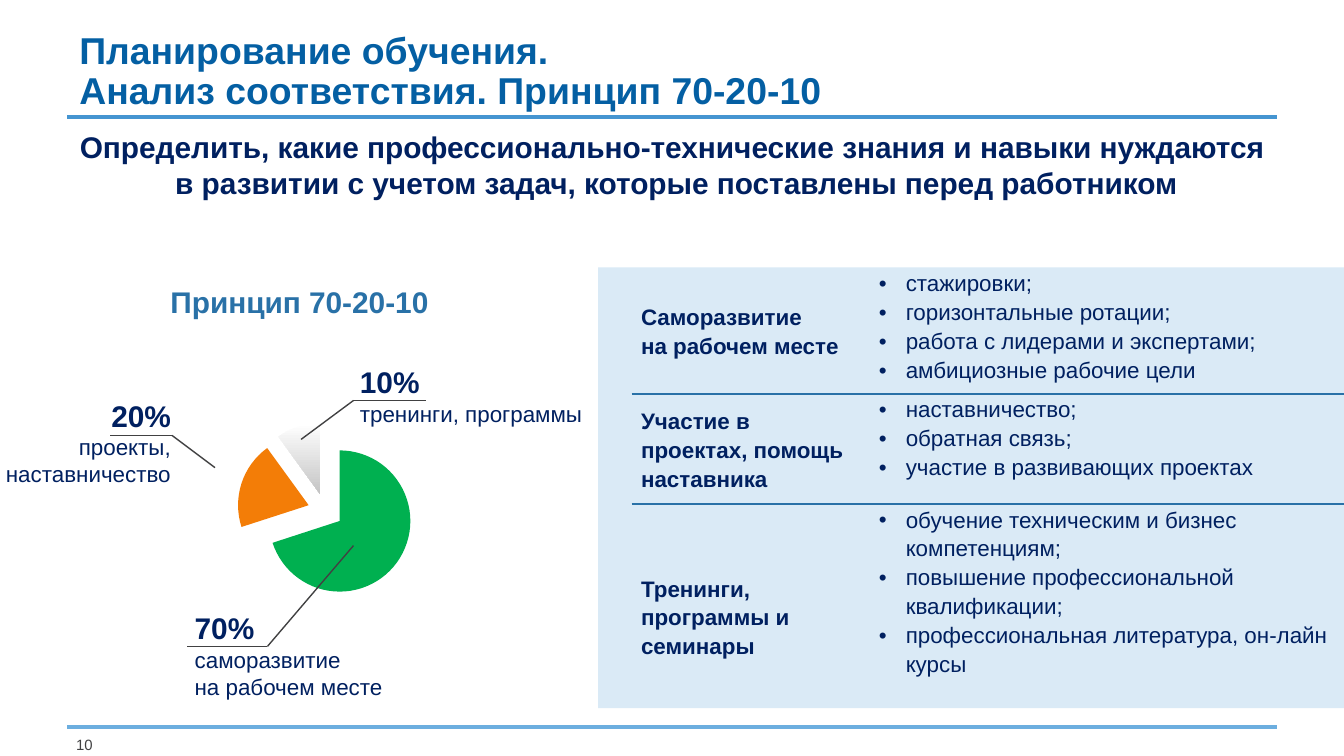
from copy import deepcopy

from lxml.etree import SubElement
from pptx import Presentation
from pptx.chart.data import CategoryChartData as Data
from pptx.dml.color import RGBColor
from pptx.enum.chart import XL_CHART_TYPE as Chart
from pptx.enum.shapes import MSO_CONNECTOR as Link, MSO_SHAPE as Shape
from pptx.enum.text import MSO_ANCHOR as Anchor, MSO_AUTO_SIZE as Auto, PP_ALIGN as Align
from pptx.oxml.ns import qn
from pptx.util import Inches, Pt

COLS, ROWS = 100, 56.25
CELL = Inches(10) / COLS
NAVY, BLUE, GREY = "002060", "2971A7", "414142"
PLAIN = "{2D5ABB26-0587-4C30-8999-92F81FD0307C}"
TOPICS = [
    ("Саморазвитие \vна рабочем месте", 9.4,
     ["стажировки;", "горизонтальные ротации;",
      "работа с лидерами и экспертами;", "амбициозные рабочие цели"]),
    ("Участие в проектах, помощь наставника", 8.2,
     ["наставничество;", "обратная связь;", "участие в развивающих проектах"]),
    ("Тренинги, программы и семинары", 16.7,
     ["обучение техническим и бизнес компетенциям;",
      "повышение профессиональной квалификации;",
      "профессиональная литература, он-лайн курсы"]),
]
LABELS = [
    ("70%", "саморазвитие \vна рабочем месте", (13.5, 24.9, 16.1, 7.7), Align.LEFT,
     [(26.3, 20.6), (19.9, 28.1), (13.9, 28.1)]),
    ("10%", "тренинги, программы", (25.8, 6.6, 18.7, 5.7), Align.LEFT,
     [(22.4, 12.7), (26.3, 9.8), (31.7, 9.8)]),
    ("20%", "проекты,\vнаставничество", (-1.2, 9.1, 14.9, 7.7), Align.RIGHT,
     [(16, 14.8), (12.8, 12.4), (8.2, 12.4)]),
]


def tint(code):
    """Turn a hex string into a colour."""
    return RGBColor.from_string(code)


def place(box, x, y, w, h):
    """Give the slide position of a part laid in grid cells from a box's corner."""
    return [round(v * CELL) for v in (box[0] + x, box[1] + y, w, h)]


def write(par, text, size=12, color=NAVY, bold=False, align=Align.LEFT, space=None, bullet=False):
    """Fill a paragraph with formatted text."""
    par.text = text
    par.alignment = align
    if space:
        par.line_spacing = space
    if bullet:
        props = par._p.get_or_add_pPr()
        props.set("marL", str(Inches(0.2)))
        props.set("indent", str(-Inches(0.2)))
        SubElement(props, qn("a:buFont"), typeface="Arial")
        SubElement(props, qn("a:buChar"), char="•")
    for run in par.runs:
        font = run.font
        font.name, font.size, font.bold = "Arial", Pt(size), bold
        font.color.rgb = tint(color)
    for brk in par._p.findall(qn("a:br")):
        brk.append(deepcopy(par.runs[0]._r.rPr))


def label(slide, spot, lines, wrap=False, inset=None):
    """Add a text box whose lines are pairs of text and format."""
    frame = slide.shapes.add_textbox(*spot).text_frame
    frame.word_wrap = wrap
    if inset is not None:
        frame.margin_left = frame.margin_right = inset
        frame.margin_top = frame.margin_bottom = inset
    for i, (text, style) in enumerate(lines):
        write(frame.add_paragraph() if i else frame.paragraphs[0], text, **style)


def rule(slide, box, start, end, color, width):
    """Draw a straight line between two points of a box."""
    x, y, _, _ = place(box, *start, 0, 0)
    u, v, _, _ = place(box, *end, 0, 0)
    line = slide.shapes.add_connector(Link.STRAIGHT, x, y, u, v)
    line.line.color.rgb = tint(color)
    line.line.width = Pt(width)
    SubElement(line._element.spPr, qn("a:effectLst"))


def border(cell, side):
    """Draw one side of a table cell."""
    line = SubElement(cell._tc.get_or_add_tcPr(), qn("a:" + side), w=str(Pt(1.5)))
    fill = SubElement(line, qn("a:solidFill"))
    SubElement(fill, qn("a:srgbClr"), val=BLUE)


def header(slide, box):
    """Place the title, its rule and the lead text."""
    title = slide.shapes.title
    title.left, title.top, title.width, title.height = place(box, 5, 2.3, 75.5, 6.5)
    frame = title.text_frame
    frame.auto_size, frame.vertical_anchor = Auto.NONE, Anchor.BOTTOM
    frame.margin_left = frame.margin_right = Inches(0.09)
    frame.margin_top = frame.margin_bottom = Inches(0.04)
    write(frame.paragraphs[0], "Планирование обучения.\vАнализ соответствия. Принцип 70-20-10",
          size=20, color="045FA3", bold=True, space=0.9)
    rule(slide, box, (5, 8.7), (95, 8.7), "4595D1", 2.25)
    lead = ("Определить, какие профессионально-технические знания и навыки нуждаются \v"
            "в развитии с учетом задач, которые поставлены перед работником")
    label(slide, place(box, 3.5, 9.1, 93.7, 6.4),
          [(lead, dict(size=16, bold=True, align=Align.CENTER))], wrap=True)


def footer(slide, box):
    """Place the bottom rule and the page number."""
    rule(slide, box, (5, 0), (95, 0), "6CAEDF", 2.25)
    label(slide, place(box, 5, 0.6, 1.9, 1.1),
          [("10", dict(size=8, color=GREY, align=Align.RIGHT))], inset=0)


def panel(slide, box):
    """Place the tinted panel with the table of topics."""
    back = slide.shapes.add_shape(Shape.RECTANGLE, *place(box, 0, 0, *box[2:]))
    back.shadow.inherit = False
    back.fill.solid()
    back.fill.fore_color.rgb = tint("DAEAF6")
    back.line.fill.background()
    high = sum(topic[1] for topic in TOPICS)
    table = slide.shapes.add_table(len(TOPICS), 2, *place(box, 2.5, 0, 53, high)).table
    table.first_row = table.horz_banding = False
    table._tbl.tblPr.find(qn("a:tableStyleId")).text = PLAIN
    for col, width in zip(table.columns, (17.7, 35.3)):
        col.width = round(width * CELL)
    for i, (name, height, items) in enumerate(TOPICS):
        table.rows[i].height = round(height * CELL)
        for cell, texts in zip(table.rows[i].cells, ([name], items)):
            head = texts is not items
            cell.margin_left = cell.margin_right = Inches(0.07)
            cell.margin_top = cell.margin_bottom = 0
            cell.vertical_anchor = Anchor.MIDDLE if head else Anchor.TOP
            for j, text in enumerate(texts):
                frame = cell.text_frame
                write(frame.add_paragraph() if j else frame.paragraphs[0], text,
                      bold=head, space=1.15, bullet=not head)
            if i > 0:
                border(cell, "lnT")
            if i < len(TOPICS) - 1:
                border(cell, "lnB")
            cell.fill.background()


def pie(slide, box):
    """Place the heading, the exploded pie and its labels with leaders."""
    label(slide, place(box, 11.7, 0.6, 21.5, 3.7),
          [("Принцип 70-20-10", dict(size=16, color=BLUE, bold=True))])
    data = CategoryData = Data()
    data.categories = ["1", "2", "3"]
    data.add_series("Series 1", (70, 20, 10))
    chart = slide.shapes.add_chart(Chart.PIE, *place(box, 8.2, 7.7, 29.1, 20.4), data).chart
    chart.has_legend = chart.has_title = False
    chart.font.name, chart.font.size = "Arial", Pt(18)
    chart.font.color.rgb = tint(GREY)
    plot = chart.plots[0]
    plot.vary_by_categories = True
    series = plot.series[0]
    for i, color in enumerate(("00B050", "F37D07")):
        fill = series.points[i].format.fill
        fill.solid()
        fill.fore_color.rgb = tint(color)
    fill = series.points[2].format.fill
    fill.gradient()
    fill.gradient_angle = 270
    for stop, color in zip(fill.gradient_stops, ("FFFFFF", "C4C4C4")):
        stop.color.rgb = tint(color)
    for i in range(3):
        series.points[i].format.line.fill.background()
    burst = series._element.makeelement(qn("c:explosion"), {"val": "25"})
    series._element.find(qn("c:dPt")).addprevious(burst)
    area = chart._chartSpace.chart.plotArea
    for old in area.findall(qn("c:layout")):
        area.remove(old)
    layout = area.makeelement(qn("c:layout"), {})
    area.insert(0, layout)
    manual = SubElement(layout, qn("c:manualLayout"))
    for key, val in (("layoutTarget", "inner"), ("xMode", "edge"), ("yMode", "edge"),
                     ("x", "0.145"), ("y", "0.183"), ("w", "0.811"), ("h", "0.644")):
        SubElement(manual, qn("c:" + key), val=val)
    for share, text, spot, align, points in LABELS:
        for start, end in zip(points, points[1:]):
            rule(slide, box, start, end, GREY, 0.75)
        label(slide, place(box, *spot),
              [(share, dict(size=16, bold=True, align=align)), (text, dict(align=align))])


def main():
    """Build the slide and save it."""
    deck = Presentation()
    deck.slide_width, deck.slide_height = round(COLS * CELL), round(ROWS * CELL)
    slide = deck.slides.add_slide(deck.slide_layouts[5])
    header(slide, (0, 0, COLS, 16))
    panel(slide, (44.5, 19.9, 55.5, 32.8))
    pie(slide, (0, 20, 44.5, 33))
    footer(slide, (0, 54.1, COLS, 2))
    deck.save("out.pptx")


if __name__ == "__main__":
    main()
